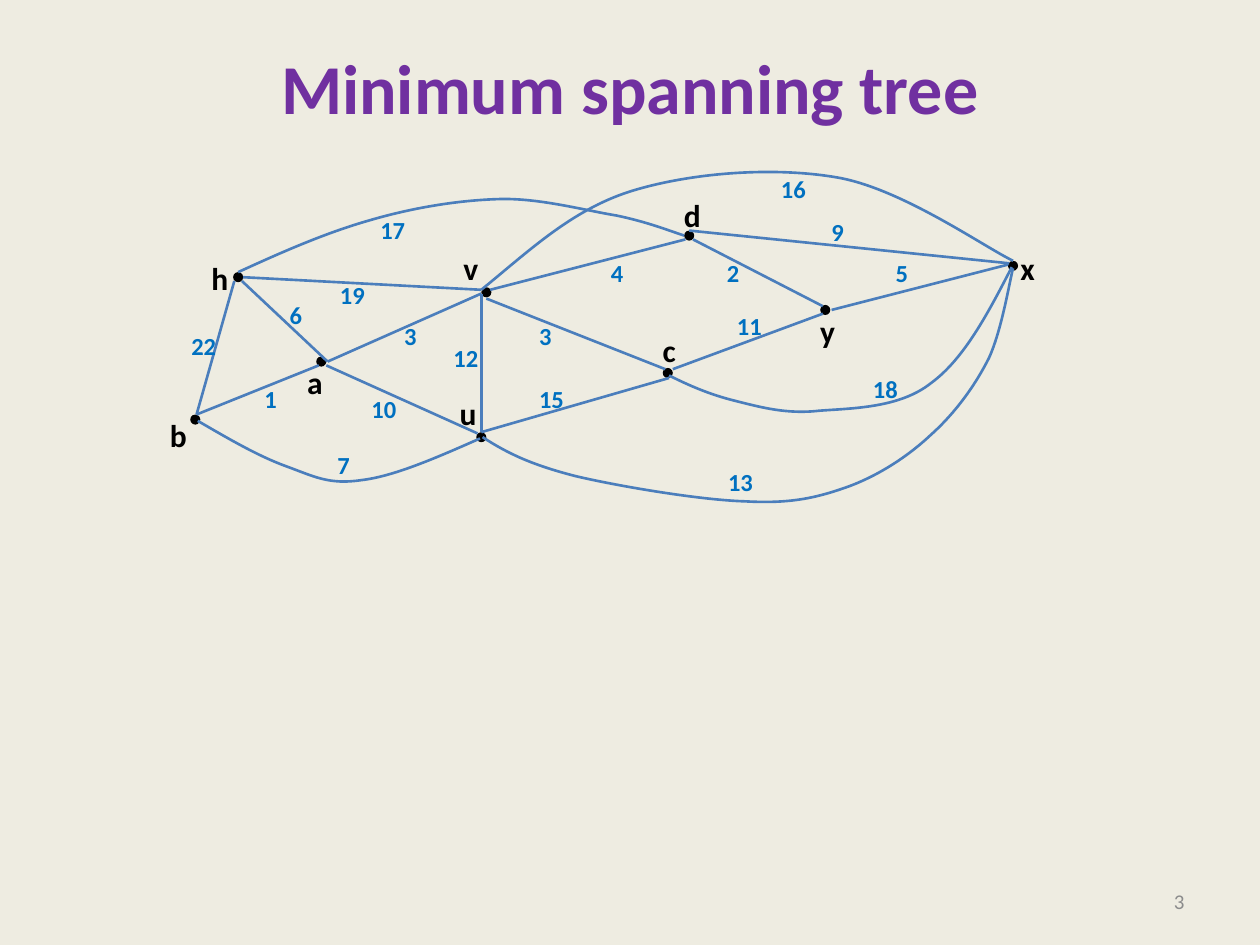
from dataclasses import dataclass

from lxml.etree import SubElement
from pptx import Presentation
from pptx.dml.color import RGBColor as Rgb
from pptx.enum.shapes import MSO_CONNECTOR as Connector, MSO_SHAPE as Preset
from pptx.enum.text import MSO_ANCHOR as Anchor, MSO_AUTO_SIZE as AutoSize, PP_ALIGN as Align
from pptx.oxml.ns import qn
from pptx.util import Inches, Pt


@dataclass(frozen=True)
class Theme:
    font: str = "Calibri"
    background: Rgb = Rgb(0xEE, 0xEC, 0xE1)
    heading: Rgb = Rgb(0x70, 0x30, 0xA0)
    edge: Rgb = Rgb(0x4B, 0x7E, 0xBC)
    vertex: Rgb = Rgb(0, 0, 0)
    weight: Rgb = Rgb(0x00, 0x70, 0xC0)
    number: Rgb = Rgb(0x8C, 0x8C, 0x8C)
    heading_size: int = 40
    vertex_size: int = 18
    weight_size: int = 14
    number_size: int = 12
    edge_width: float = 1.5


theme = Theme()
deck = Presentation()
deck.slide_width, deck.slide_height = Inches(10), Inches(7.5)
column, row = deck.slide_width / 10, deck.slide_height / 7.5


def grid(*lengths):
    return [round(length * (row if i % 2 else column)) for i, length in enumerate(lengths)]


def write(box, text, size, color, bold=True, align=Align.LEFT):
    frame = box.text_frame
    frame.text = text
    paragraph = frame.paragraphs[0]
    paragraph.alignment = align
    font = paragraph.font
    font.name, font.size, font.bold = theme.font, Pt(size), bold
    font.color.rgb = color
    return frame


slide = deck.slides.add_slide(deck.slide_layouts[5])
slide.background.fill.solid()
slide.background.fill.fore_color.rgb = theme.background

heading = slide.shapes.title
heading.left, heading.top, heading.width, heading.height = grid(0.5, 0.3, 9, 1.25)
heading_frame = write(heading, "Minimum spanning tree", theme.heading_size, theme.heading, align=Align.CENTER)
heading_frame.vertical_anchor = Anchor.MIDDLE
heading_frame.margin_bottom = round(0.52 * row)

page_number = slide.shapes.add_textbox(*grid(7.17, 6.95, 2.33, 0.4))
number_frame = write(page_number, "3", theme.number_size, theme.number, bold=False, align=Align.RIGHT)
number_frame.word_wrap = True
number_frame.vertical_anchor = Anchor.MIDDLE

graph = slide.shapes.add_group_shape().shapes

# name: dot left, dot top, label left, label top, label width
vertices = {
    "b": (1.51, 3.29, 1.25, 3.25, 0.34),
    "a": (2.51, 2.83, 2.34, 2.83, 0.33),
    "c": (5.26, 2.92, 5.16, 2.58, 0.31),
    "d": (5.43, 1.83, 5.33, 1.51, 0.34),
    "h": (1.85, 2.16, 1.58, 2.01, 0.34),
    "x": (8, 2.07, 8, 1.93, 0.32),
    "y": (6.51, 2.42, 6.41, 2.43, 0.32),
    "u": (3.78, 3.43, 3.55, 3.08, 0.34),
    "v": (3.82, 2.28, 3.58, 1.93, 0.32),
}
straight_edges = [
    (1.92, 2.23, 2.6, 2.87),
    (1.56, 3.29, 2.53, 2.9),
    (2.6, 2.87, 3.82, 2.33),
    (2.59, 2.9, 3.79, 3.44),
    (3.82, 2.33, 3.82, 3.43),
    (5.44, 1.9, 3.89, 2.3),
    (5.28, 2.93, 3.86, 2.37),
    (3.82, 3.43, 5.31, 3),
    (6.53, 2.43, 5.5, 1.9),
    (5.34, 2.93, 6.53, 2.49),
    (8, 2.1, 6.6, 2.46),
    (1.86, 2.23, 1.56, 3.29),
    (8.01, 2.09, 5.47, 1.83),
    (1.93, 2.2, 3.82, 2.3),
]
# bounds (left, top, width, height), then the start and three points for each bend
curved_edges = [
    ((5.31, 2.12, 2.72, 1.15),
     [(5.31, 2.98), (5.47, 3.06), (5.63, 3.13), (5.83, 3.18), (6.03, 3.23), (6.24, 3.29), (6.5, 3.26),
      (6.76, 3.24), (7.14, 3.24), (7.39, 3.04), (7.65, 2.85), (7.84, 2.49), (8.03, 2.12)]),
    ((3.83, 2.13, 4.21, 1.86),
     [(3.83, 3.47), (4.03, 3.6), (4.22, 3.69), (4.57, 3.78), (4.91, 3.86), (5.56, 3.97), (5.92, 3.98),
      (6.28, 4), (6.49, 3.95), (6.74, 3.86), (6.98, 3.77), (7.21, 3.62), (7.39, 3.45),
      (7.58, 3.28), (7.74, 3.06), (7.85, 2.84), (7.95, 2.62), (8.01, 2.25), (8.04, 2.13)]),
    ((1.57, 3.34, 2.24, 0.49),
     [(1.57, 3.34), (1.81, 3.48), (2.05, 3.62), (2.27, 3.7), (2.49, 3.78), (2.61, 3.85), (2.87, 3.81),
      (3.13, 3.78), (3.47, 3.63), (3.81, 3.48)]),
    ((1.89, 1.58, 3.54, 0.58),
     [(1.89, 2.16), (2.24, 2), (2.58, 1.85), (2.93, 1.75), (3.27, 1.65), (3.63, 1.59), (3.96, 1.58),
      (4.28, 1.57), (4.64, 1.67), (4.89, 1.71), (5.13, 1.76), (5.28, 1.82), (5.43, 1.87)]),
    ((3.82, 1.37, 4.22, 0.94),
     [(3.82, 2.3), (4.19, 2), (4.53, 1.67), (5, 1.52), (5.48, 1.37), (6.14, 1.32), (6.65, 1.41),
      (7.16, 1.5), (7.81, 1.96), (8.04, 2.07)]),
]
weights = [
    ("18", 6.83, 2.92), ("7", 2.58, 3.52), ("1", 2, 3), ("19", 2.6, 2.17), ("22", 1.42, 2.58),
    ("10", 2.85, 3.08), ("3", 3.11, 2.5), ("12", 3.5, 2.67), ("3", 4.18, 2.5), ("15", 4.18, 3),
    ("11", 5.75, 2.42), ("5", 7.01, 2), ("16", 6.1, 1.33), ("17", 2.92, 1.66), ("13", 5.68, 3.66),
    ("4", 4.75, 2), ("2", 5.67, 2), ("9", 6.5, 1.67), ("6", 2.2, 2.33),
]

for dot_left, dot_top, *_ in vertices.values():
    dot = graph.add_shape(Preset.OVAL, *grid(dot_left, dot_top, 0.08, 0.08))
    dot.shadow.inherit = False
    dot.fill.solid()
    dot.fill.fore_color.rgb = theme.vertex
    dot.line.fill.background()

edges = []
for ends in straight_edges:
    edge = graph.add_connector(Connector.STRAIGHT, *grid(*ends))
    SubElement(edge.element.spPr, qn("a:effectLst"))
    edges.append(edge)

for (left, top, width, height), points in curved_edges:
    builder = graph.build_freeform(*grid(left, top))
    builder.add_line_segments([grid(left + width, top + height)], close=False)
    edge = builder.convert_to_shape()
    outline = edge.element.find(".//" + qn("a:path"))
    for segment in list(outline):
        outline.remove(segment)
    for i, (x, y) in enumerate(points):
        if i == 0:
            segment = SubElement(outline, qn("a:moveTo"))
        elif i % 3 == 1:
            segment = SubElement(outline, qn("a:cubicBezTo"))
        across, down = grid(x - left, y - top)
        SubElement(segment, qn("a:pt"), x=str(across), y=str(down))
    edge.shadow.inherit = False
    edge.fill.background()
    edges.append(edge)

for edge in edges:
    edge.line.color.rgb = theme.edge
    edge.line.width = Pt(theme.edge_width)

labels = [(name, left, top, width, 0.4, theme.vertex_size, theme.vertex)
          for name, (_, _, left, top, width) in vertices.items()]
labels += [(weight, left, top, 0.2 + 0.1 * len(weight), 0.34, theme.weight_size, theme.weight)
           for weight, left, top in weights]
for text, left, top, width, height, size, color in labels:
    label = graph.add_textbox(*grid(left, top, width, height))
    label_frame = write(label, text, size, color)
    label_frame.word_wrap = False
    label_frame.auto_size = AutoSize.SHAPE_TO_FIT_TEXT

deck.save("out.pptx")
